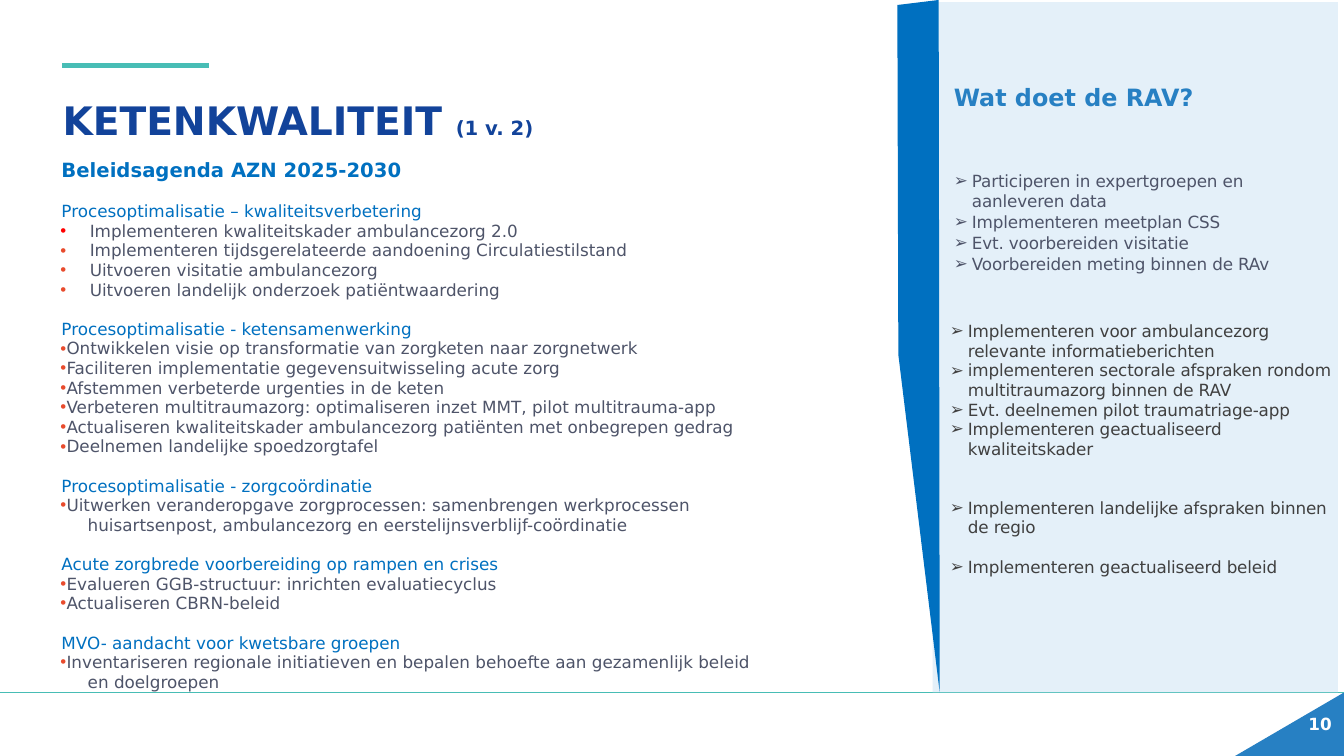
from lxml import etree
from pptx import Presentation
from pptx.dml.color import RGBColor
from pptx.enum.shapes import MSO_CONNECTOR, MSO_SHAPE
from pptx.enum.text import MSO_ANCHOR, MSO_AUTO_SIZE, PP_ALIGN
from pptx.oxml.ns import qn
from pptx.util import Inches, Pt

STRAIGHT = MSO_CONNECTOR.STRAIGHT
RECTANGLE = MSO_SHAPE.RECTANGLE
TOP, MIDDLE = MSO_ANCHOR.TOP, MSO_ANCHOR.MIDDLE
LEFT, RIGHT = PP_ALIGN.LEFT, PP_ALIGN.RIGHT
NO_AUTOFIT = MSO_AUTO_SIZE.NONE

NAVY, BLUE, SKY, PALE = "12439A", "0070C0", "2780C3", "D1E6F6"
TEAL, RED, ORANGE = "48BDB5", "FF0000", "E84B2D"
SLATE, DARK, WHITE = "4E5469", "404040", "FFFFFF"


def rgb(value):
    return RGBColor.from_string(value)


class SlideBuilder:
    font = "DejaVu Sans"
    line_height = 14

    def __init__(self, slide):
        self.slide = slide

    def fill(self, shape, color, opacity=None):
        shape.shadow.inherit = False
        shape.fill.solid()
        shape.fill.fore_color.rgb = rgb(color)
        shape.line.fill.background()
        if opacity:
            clr = shape.fill._xPr.find(".//" + qn("a:srgbClr"))
            etree.SubElement(clr, qn("a:alpha"), val=str(opacity * 1000))

    def panel(self, x, y, w, h, color, opacity):
        shape = self.slide.shapes.add_shape(
            RECTANGLE, Inches(x), Inches(y), Inches(w), Inches(h))
        self.fill(shape, color, opacity)

    def polygon(self, points, color):
        corners = [(Inches(x), Inches(y)) for x, y in points]
        outline = self.slide.shapes.build_freeform(*corners[0])
        outline.add_line_segments(corners[1:], close=True)
        self.fill(outline.convert_to_shape(), color)

    def line(self, x1, x2, y, width):
        rule = self.slide.shapes.add_connector(
            STRAIGHT, Inches(x1), Inches(y), Inches(x2), Inches(y))
        rule.line.color.rgb = rgb(TEAL)
        rule.line.width = Pt(width)
        etree.SubElement(rule._element.spPr, qn("a:effectLst"))

    def frame(self, shape, anchor=TOP):
        frame = shape.text_frame
        frame.word_wrap = True
        frame.auto_size = NO_AUTOFIT
        frame.vertical_anchor = anchor
        frame.margin_left = frame.margin_right = 0
        frame.margin_top = frame.margin_bottom = 0
        return frame

    def text_box(self, x, y, w, h, anchor=TOP):
        box = self.slide.shapes.add_textbox(
            Inches(x), Inches(y), Inches(w), Inches(h))
        return self.frame(box, anchor)

    def title(self, x, y, w, h, parts):
        heading = self.slide.shapes.title
        heading.left, heading.top = Inches(x), Inches(y)
        heading.width, heading.height = Inches(w), Inches(h)
        paragraph = self.frame(heading).paragraphs[0]
        paragraph.alignment = LEFT
        paragraph.line_spacing = 0.9
        for text, size in parts:
            self.run(paragraph, text, size, NAVY, bold=True)

    def run(self, paragraph, text, size, color, bold=False, tracking=0):
        run = paragraph.add_run()
        run.text = text
        run.font.name = self.font
        run.font.size = Pt(size)
        run.font.bold = bold
        run.font.color.rgb = rgb(color)
        if tracking:
            run.font._element.set("spc", str(tracking))

    def paragraph(self, frame, text, color, size=12, bold=False, before=0,
                  indent=0.0, hang=0.0, bullet=None, bullet_color=None,
                  bullet_font=None, align=LEFT, tracking=0):
        first = frame.paragraphs[0]
        paragraph = frame.add_paragraph() if first.runs else first
        paragraph.alignment = align
        paragraph.line_spacing = Pt(self.line_height)
        if before and first.runs:
            paragraph.space_before = Pt(before)
        props = paragraph._p.get_or_add_pPr()
        props.set("marL", str(Inches(indent)))
        props.set("indent", str(Inches(-hang)))
        if bullet:
            clr = etree.SubElement(props, qn("a:buClr"))
            etree.SubElement(clr, qn("a:srgbClr"), val=bullet_color or color)
            etree.SubElement(props, qn("a:buFont"),
                             typeface=bullet_font or self.font)
            etree.SubElement(props, qn("a:buChar"), char=bullet)
        self.run(paragraph, text, size, color, bold, tracking)

    def arrow_list(self, frame, items, color):
        for text, before in items:
            self.paragraph(frame, text, color, before=before, indent=0.19,
                           hang=0.18, bullet="➢", tracking=-10)


# Per topic: heading, bullet indent, and items with an optional second line
AGENDA = [
    ("Procesoptimalisatie – kwaliteitsverbetering", 0.29, [
        ["Implementeren kwaliteitskader ambulancezorg 2.0"],
        ["Implementeren tijdsgerelateerde aandoening Circulatiestilstand"],
        ["Uitvoeren visitatie ambulancezorg"],
        ["Uitvoeren landelijk onderzoek patiëntwaardering"]]),
    ("Procesoptimalisatie - ketensamenwerking", 0.06, [
        ["Ontwikkelen visie op transformatie van zorgketen naar zorgnetwerk"],
        ["Faciliteren implementatie gegevensuitwisseling acute zorg"],
        ["Afstemmen verbeterde urgenties in de keten"],
        ["Verbeteren multitraumazorg: optimaliseren inzet MMT, pilot multitrauma-app"],
        ["Actualiseren kwaliteitskader ambulancezorg patiënten met onbegrepen gedrag"],
        ["Deelnemen landelijke spoedzorgtafel"]]),
    ("Procesoptimalisatie - zorgcoördinatie", 0.06, [
        ["Uitwerken veranderopgave zorgprocessen: samenbrengen werkprocessen",
         "huisartsenpost, ambulancezorg en eerstelijnsverblijf-coördinatie"]]),
    ("Acute zorgbrede voorbereiding op rampen en crises", 0.06, [
        ["Evalueren GGB-structuur: inrichten evaluatiecyclus"],
        ["Actualiseren CBRN-beleid"]]),
    ("MVO- aandacht voor kwetsbare groepen", 0.06, [
        ["Inventariseren regionale initiatieven en bepalen behoefte aan gezamenlijk beleid",
         "en doelgroepen"]]),
]

# Action and the space before it in points
QUALITY_ACTIONS = [
    ("Participeren in expertgroepen en aanleveren data", 0),
    ("Implementeren meetplan CSS", 1),
    ("Evt. voorbereiden visitatie", 1),
    ("Voorbereiden meting binnen de RAv", 1),
]
CHAIN_ACTIONS = [
    ("Implementeren voor ambulancezorg relevante informatieberichten", 0),
    ("implementeren sectorale afspraken rondom multitraumazorg binnen de RAV", 0),
    ("Evt. deelnemen pilot traumatriage-app", 0),
    ("Implementeren geactualiseerd kwaliteitskader", 0),
    ("Implementeren landelijke afspraken binnen de regio", 28),
    ("Implementeren geactualiseerd beleid", 14),
]


def main():
    prs = Presentation()
    prs.slide_width, prs.slide_height = Inches(13.33), Inches(7.5)
    page = SlideBuilder(prs.slides.add_slide(prs.slide_layouts[5]))

    # Corner, rules, side panel and ribbon
    page.polygon([(13.33, 7.5), (13.33, 6.87), (12.25, 7.5)], SKY)
    page.line(0.62, 2.07, 0.65, 3.75)
    page.line(0, 13.33, 6.87, 0.75)
    page.panel(9.25, 0.02, 4.02, 6.85, PALE, 58)
    page.polygon([(8.9, 0.05), (9.31, 0), (9.32, 6.87), (8.91, 3.52)], BLUE)

    # Title and page number
    page.title(0.62, 1.01, 5.76, 0.42, [("KETENKWALITEIT ", 28), ("(1 v. 2)", 14)])
    number = page.text_box(12.71, 7.08, 0.5, 0.2, MIDDLE)
    page.paragraph(number, "10", WHITE, bold=True, align=RIGHT)

    # Policy agenda
    agenda = page.text_box(0.6, 1.61, 7.18, 5.25)
    page.paragraph(agenda, "Beleidsagenda AZN 2025-2030", BLUE, size=14,
                   bold=True, indent=0.01)
    bullet_color = RED
    for topic, indent, items in AGENDA:
        page.paragraph(agenda, topic, BLUE, before=page.line_height, indent=0.01)
        for item, *continuation in items:
            page.paragraph(agenda, item, SLATE, indent=indent, hang=indent,
                           bullet="•", bullet_color=bullet_color,
                           bullet_font="Arial")
            bullet_color = ORANGE
            for text in continuation:
                page.paragraph(agenda, text, SLATE, indent=0.27)

    # Actions of the ambulance service
    question = page.text_box(9.46, 0.91, 3.7, 0.3)
    page.paragraph(question, "Wat doet de RAV?", SKY, size=17, bold=True)
    page.arrow_list(page.text_box(9.45, 1.7, 3.78, 1.05), QUALITY_ACTIONS, SLATE)
    page.arrow_list(page.text_box(9.41, 3.19, 3.82, 2.56), CHAIN_ACTIONS, DARK)

    prs.save("out.pptx")


if __name__ == "__main__":
    main()
